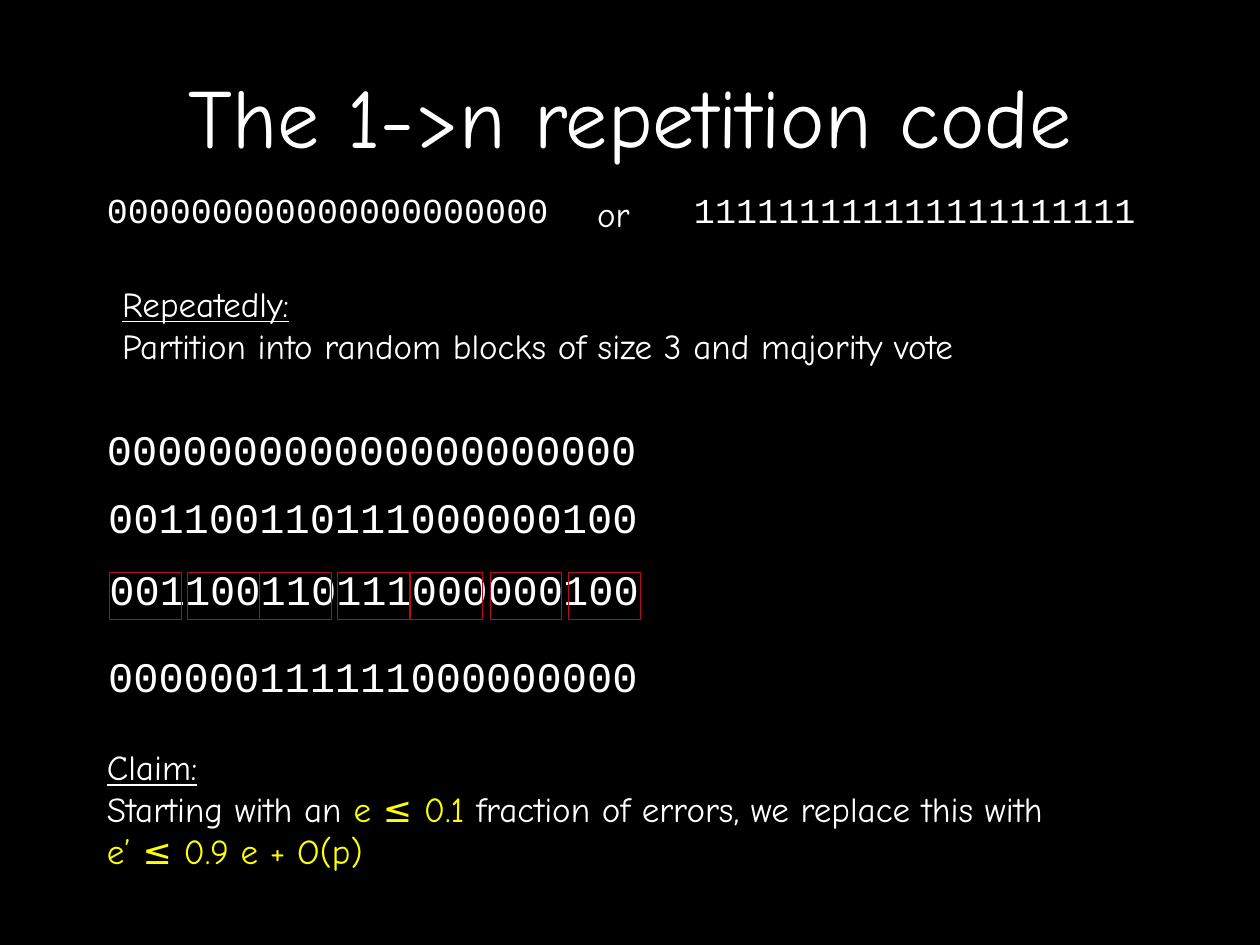
from pptx import Presentation
from pptx.dml.color import RGBColor
from pptx.enum.shapes import MSO_SHAPE
from pptx.enum.text import MSO_ANCHOR, MSO_AUTO_SIZE, PP_ALIGN
from pptx.util import Inches, Pt

RECTANGLE = MSO_SHAPE.RECTANGLE
MIDDLE = MSO_ANCHOR.MIDDLE
CENTER = PP_ALIGN.CENTER
FIT_SHAPE = MSO_AUTO_SIZE.SHAPE_TO_FIT_TEXT
NO_FIT = MSO_AUTO_SIZE.NONE

WHITE, YELLOW, RED, BLACK = "FFFFFF", "FFFF00", "B50B1B", "000000"
PROSE, CODE = "Comic Neue", "Courier New"


def color(hex_string):
    return RGBColor.from_string(hex_string)


def add_text(shapes, place, lines, font, size, wrap=False):
    """Each line is a list of (text, colour, underline) spans."""
    box = shapes.add_textbox(*[Inches(length) for length in place])
    frame = box.text_frame
    frame.word_wrap = wrap
    frame.auto_size = FIT_SHAPE
    para = frame.paragraphs[0]
    for number, line in enumerate(lines):
        if number:
            para.add_line_break()
        for text, hex_string, underline in line:
            span = para.add_run()
            span.text = text
            span.font.name = font
            span.font.size = Pt(size)
            span.font.color.rgb = color(hex_string)
            span.font.underline = underline


deck = Presentation()
deck.slide_width, deck.slide_height = Inches(10), Inches(7.5)
page = deck.slides.add_slide(deck.slide_layouts[5])
page.background.fill.solid()
page.background.fill.fore_color.rgb = color(BLACK)

# Title
title = page.shapes.title
title.left, title.top = Inches(0.75), Inches(0.13)
title.width, title.height = Inches(8.5), Inches(1.56)
title.text_frame.text = "The 1->n repetition code"
title.text_frame.vertical_anchor = MIDDLE
title.text_frame.auto_size = NO_FIT
heading = title.text_frame.paragraphs[0]
heading.alignment = CENTER
heading_font = heading.runs[0].font
heading_font.name, heading_font.size = PROSE, Pt(48)
heading_font.color.rgb = color(WHITE)

# The two codewords
for left, bit in ((0.75, "0"), (5.41, "1")):
    add_text(page.shapes, (left, 1.45, 3.74, 0.44),
             [[(bit * 21, WHITE, False)]], CODE, 20)
add_text(page.shapes, (4.64, 1.48, 0.76, 0.44),
         [[("or", WHITE, False)]], PROSE, 20, wrap=True)

# Procedure
add_text(page.shapes, (0.87, 2.19, 7.38, 0.77), [
    [("Repeatedly:", WHITE, True)],
    [("Partition into random blocks of size 3 and majority vote", WHITE, False)],
], PROSE, 20)

# Bit strings: codeword, with errors, partitioned, after the vote
block_group = page.shapes.add_group_shape()
bit_rows = (
    (page.shapes, 0.75, 3.31, "000000000000000000000"),
    (page.shapes, 0.76, 3.85, "001100110111000000100"),
    (block_group.shapes, 0.77, 4.42, "001100110111000000100"),
    (page.shapes, 0.76, 5.11, "000000111111000000000"),
)
for shapes, left, top, bits in bit_rows:
    add_text(shapes, (left, top, 4.44, 0.5), [[(bits, WHITE, False)]], CODE, 24)

# Blocks of three bits
for left in (0.87, 1.49, 2.06, 2.68, 3.26, 3.89, 4.51):
    block = block_group.shapes.add_shape(
        RECTANGLE, Inches(left), Inches(4.54), Inches(0.57), Inches(0.38))
    block.shadow.inherit = False
    block.fill.background()
    block.line.color.rgb = color(RED)
    block.line.width = Pt(0.5)

# Claim
add_text(page.shapes, (0.75, 5.87, 8.34, 1.11), [
    [("Claim:", WHITE, True)],
    [("Starting with an ", WHITE, False), ("e ≤ 0.1", YELLOW, False),
     (" fraction of errors, we replace this with", WHITE, False)],
    [("e’ ≤ 0.9 e + O(p)", YELLOW, False)],
], PROSE, 20)

deck.save("out.pptx")
